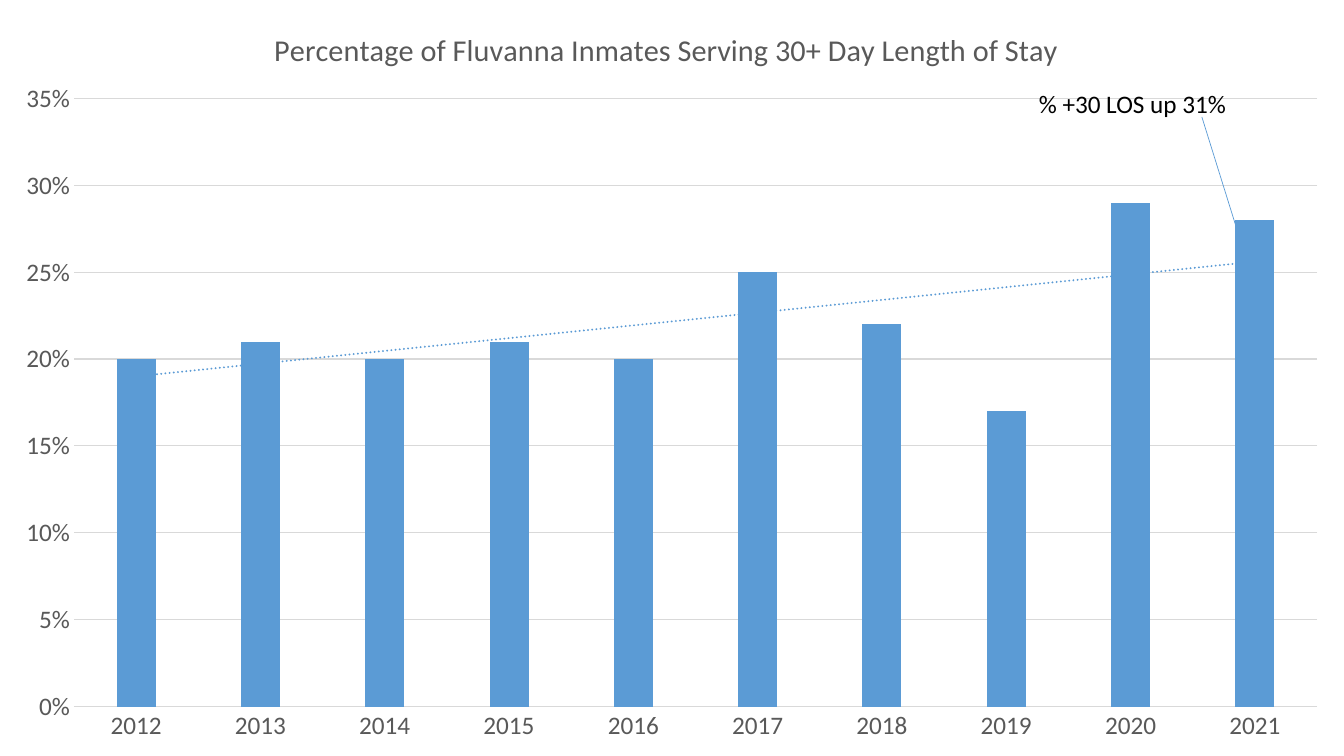
from lxml import etree
from pptx import Presentation
from pptx import util as u
from pptx.chart import data
from pptx.dml.color import RGBColor
from pptx.enum import chart as ch, shapes, text
from pptx.oxml import parse_xml
from pptx.oxml.ns import nsdecls, qn

HUES = {"bar": "5B9BD5", "grid": "D9D9D9", "label": "595959", "note": "000000"}
RATES = {
    "2012": 0.2, "2013": 0.21, "2014": 0.2, "2015": 0.21, "2016": 0.2,
    "2017": 0.25, "2018": 0.22, "2019": 0.17, "2020": 0.29, "2021": 0.28,
}
WIDE, HIGH = 960, 540


class Board:
    face = "Calibri"
    size = 18

    def __init__(self, deck):
        self.slide = deck.slides.add_slide(deck.slide_layouts[6])

    def hue(self, name):
        return RGBColor.from_string(HUES[name])

    def apply(self, item, **form):
        for key, value in form.items():
            setattr(item, key, value)

    def font(self, font, hue, size=size):
        self.apply(font, name=self.face, size=u.Pt(size), bold=False)
        font.color.rgb = self.hue(hue)

    def line(self, line, hue, width):
        line.color.rgb = self.hue(hue)
        line.width = u.Pt(width)

    def columns(self, title, rates, box, plot, spot):
        feed = data.CategoryChartData(number_format="0%")
        feed.categories = list(rates)
        feed.add_series("Series 1", list(rates.values()))
        kind = ch.XL_CHART_TYPE.COLUMN_CLUSTERED
        chart = self.slide.shapes.add_chart(kind, *map(u.Pt, box), feed).chart
        self.font(chart.font, "label")
        self.apply(chart, has_legend=False, has_title=True)
        head = chart.chart_title.text_frame
        head.text = title
        self.font(head.paragraphs[0].runs[0].font, "label", 21.6)
        chart.chart_title.include_in_layout = False

        bars = chart.plots[0]
        self.apply(bars, gap_width=219, overlap=-27, vary_by_categories=False)
        fill = bars.series[0].format.fill
        fill.solid()
        fill.fore_color.rgb = self.hue("bar")

        years, share = chart.category_axis, chart.value_axis
        for axis in (years, share):
            self.apply(axis, major_tick_mark=ch.XL_TICK_MARK.NONE,
                       minor_tick_mark=ch.XL_TICK_MARK.NONE)
            self.font(axis.tick_labels.font, "label")
        self.line(years.format.line, "grid", 0.75)
        self.apply(share, minimum_scale=0, maximum_scale=0.35,
                   major_unit=0.05, has_major_gridlines=True)
        self.apply(share.tick_labels, number_format="0%",
                   number_format_is_linked=False)
        share.format.line.fill.background()
        self.line(share.major_gridlines.format.line, "grid", 0.75)

        area = chart._chartSpace.chart.plotArea
        self.place(area, plot, '<c:layoutTarget val="inner"/>')
        self.place(chart.chart_title._element, spot)
        self.trend(bars.series[0])

    def place(self, part, spot, target=""):
        for old in part.findall(qn("c:layout")):
            part.remove(old)
        marks = "".join(f'<c:{k} val="{v}"/>' for k, v in spot.items())
        frame = parse_xml(
            f'<c:layout {nsdecls("c")}><c:manualLayout>{target}'
            '<c:xMode val="edge"/><c:yMode val="edge"/>'
            f'{marks}</c:manualLayout></c:layout>')
        words = part.find(qn("c:tx"))
        if words is None:
            part.insert(0, frame)
        else:
            words.addnext(frame)

    def trend(self, series):
        series._element.find(qn("c:cat")).addprevious(parse_xml(
            f'<c:trendline {nsdecls("c", "a")}><c:spPr>'
            f'<a:ln w="{u.Pt(1.5)}" cap="rnd"><a:solidFill>'
            f'<a:srgbClr val="{HUES["bar"]}"/></a:solidFill>'
            '<a:prstDash val="sysDot"/></a:ln></c:spPr>'
            '<c:trendlineType val="linear"/><c:dispRSqr val="0"/>'
            '<c:dispEq val="0"/></c:trendline>'))

    def arrow(self, *ends):
        kind = shapes.MSO_CONNECTOR.STRAIGHT
        link = self.slide.shapes.add_connector(kind, *map(u.Pt, ends))
        self.line(link.line, "bar", 0.5)
        props = link._element.spPr
        etree.SubElement(props.find(qn("a:ln")), qn("a:tailEnd"), type="triangle")
        etree.SubElement(props, qn("a:effectLst"))

    def note(self, words, *box):
        frame = self.slide.shapes.add_textbox(*map(u.Pt, box)).text_frame
        self.apply(frame, word_wrap=True,
                   auto_size=text.MSO_AUTO_SIZE.SHAPE_TO_FIT_TEXT)
        run = frame.paragraphs[0].add_run()
        run.text = words
        self.font(run.font, "note")


def main():
    deck = Presentation()
    deck.slide_width, deck.slide_height = u.Pt(WIDE), u.Pt(HIGH)
    board = Board(deck)
    board.columns("Percentage of Fluvanna Inmates Serving 30+ Day Length of Stay",
                  RATES, (0, 0, WIDE, HIGH),
                  {"x": 0.055, "y": 0.13, "w": 0.925, "h": 0.805},
                  {"x": 0.2, "y": 0.03})
    board.arrow(858.5, 83.5, 887, 175)
    board.note("% +30 LOS up 31%", 735, 59.5, 152, 29)
    deck.save("out.pptx")


if __name__ == "__main__":
    main()
